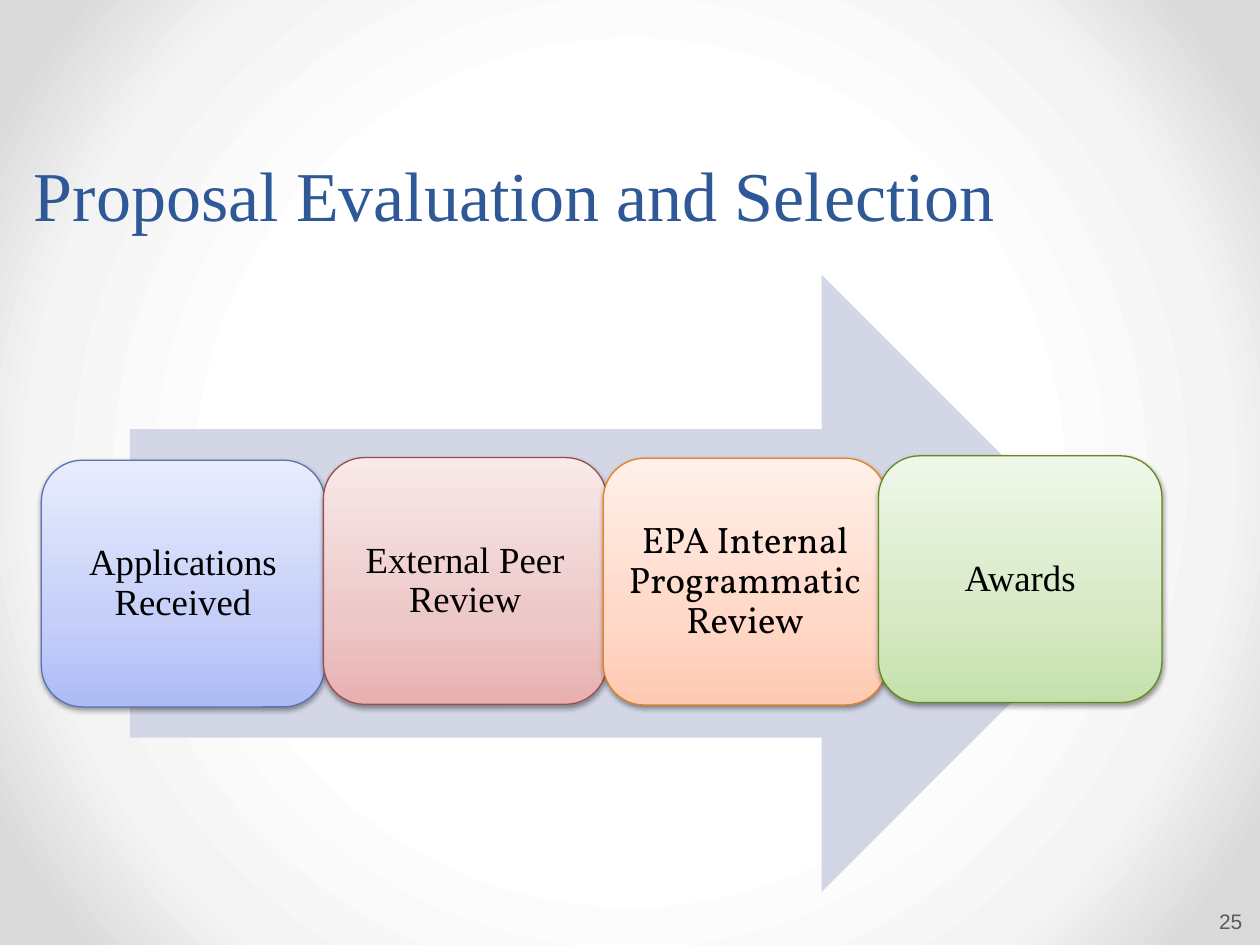
from dataclasses import dataclass

from lxml import etree
from pptx import Presentation
from pptx import util as u
from pptx.dml.color import RGBColor
from pptx.enum import shapes, text
from pptx.oxml import parse_xml
from pptx.oxml.ns import nsdecls, qn

SERIF = "Times New Roman"
STAGE_SIZE = (162, 141)
LINEAR_UP = '<a:lin ang="16200000" scaled="0"/>'
FROM_CENTRE = ('<a:path path="circle">'
               '<a:fillToRect l="50000" t="50000" r="50000" b="50000"/></a:path>')


@dataclass
class Stage:
    label: str
    left: float
    top: float
    stops: list[tuple[int, str]]
    outline: str
    font: str = SERIF


STAGES = [
    Stage("Applications Received", 23.6, 263,
          [(0, "ADBBF6"), (35, "C5CFF8"), (100, "E8ECFD")], "5C72B2"),
    Stage("External Peer Review", 184.8, 261.5,
          [(0, "E8B0B0"), (35, "EDC8C8"), (100, "F9E9E9")], "9A4E4E"),
    Stage("EPA Internal Programmatic Review", 344.7, 261.9,
          [(0, "FFC9B1"), (35, "FFD8C8"), (100, "FFF0EA")], "E6811C", "Vollkorn"),
    Stage("Awards", 502, 260.5,
          [(0, "C5E1AB"), (35, "D6E9C5"), (100, "EFF7E9")], "62891C"),
]


def rgb(value: str) -> RGBColor:
    return RGBColor.from_string(value)


def set_gradient(properties, stops: list[tuple[int, str]], direction: str) -> None:
    """Replace the solid fill among the properties with a gradient."""
    stop_xml = "".join(f'<a:gs pos="{pos * 1000}"><a:srgbClr val="{color}"/></a:gs>'
                       for pos, color in stops)
    gradient = parse_xml(f'<a:gradFill {nsdecls("a")} rotWithShape="1">'
                         f'<a:gsLst>{stop_xml}</a:gsLst>{direction}</a:gradFill>')
    properties.replace(properties.find(qn("a:solidFill")), gradient)


def add_soft_shadow(shape) -> None:
    shape.shadow.inherit = False
    effects = shape.element.spPr.find(qn("a:effectLst"))
    shadow = etree.SubElement(effects, qn("a:outerShdw"), blurRad=str(u.Pt(3.1)),
                              dist=str(u.Pt(1.6)), dir="5400000", rotWithShape="0")
    color = etree.SubElement(shadow, qn("a:srgbClr"), val="000000")
    etree.SubElement(color, qn("a:alpha"), val="38000")


def write(frame, content: str, size: float, font: str, color: str, align) -> None:
    frame.text = content
    frame.word_wrap = True
    paragraph = frame.paragraphs[0]
    paragraph.alignment = align
    run_font = paragraph.runs[0].font
    run_font.size, run_font.name = u.Pt(size), font
    run_font.color.rgb = rgb(color)


def set_margins(frame, left: float, top: float, right: float, bottom: float) -> None:
    frame.margin_left, frame.margin_top = u.Pt(left), u.Pt(top)
    frame.margin_right, frame.margin_bottom = u.Pt(right), u.Pt(bottom)


def add_stage(slide, stage: Stage) -> None:
    box = slide.shapes.add_shape(
        shapes.MSO_SHAPE.ROUNDED_RECTANGLE, u.Pt(stage.left), u.Pt(stage.top),
        *map(u.Pt, STAGE_SIZE))
    box.fill.solid()
    set_gradient(box.element.spPr, stage.stops, LINEAR_UP)
    box.line.color.rgb = rgb(stage.outline)
    box.line.width = u.Pt(0.75)
    add_soft_shadow(box)
    frame = box.text_frame
    write(frame, stage.label, 21, stage.font, "000000", text.PP_ALIGN.CENTER)
    set_margins(frame, 6.3, 6.3, 6.3, 6.3)
    frame.vertical_anchor = text.MSO_ANCHOR.MIDDLE
    frame.paragraphs[0].line_spacing = 0.9


def add_title(slide) -> None:
    title = slide.shapes.title
    title.left, title.top = u.Pt(12.2), u.Pt(88.6)
    title.width, title.height = u.Pt(613.4), u.Pt(65.5)
    frame = title.text_frame
    write(frame, "Proposal Evaluation and Selection", 40, SERIF, "2F5897",
          text.PP_ALIGN.LEFT)
    frame.vertical_anchor = text.MSO_ANCHOR.TOP
    frame.auto_size = text.MSO_AUTO_SIZE.NONE
    frame.paragraphs[0].line_spacing = 0.9


def add_page_number(slide) -> None:
    number = slide.shapes.add_textbox(u.Pt(669.6), u.Pt(508.3), u.Pt(43.9), u.Pt(28.8))
    frame = number.text_frame
    write(frame, "25", 12, "Arial", "595959", text.PP_ALIGN.RIGHT)
    set_margins(frame, 2.2, 3.6, 3.6, 3.6)
    frame.vertical_anchor = text.MSO_ANCHOR.BOTTOM


def add_arrow(slide) -> None:
    arrow = slide.shapes.add_shape(shapes.MSO_SHAPE.RIGHT_ARROW, u.Pt(74.2), u.Pt(157),
                                   u.Pt(571.7), u.Pt(352.8))
    arrow.fill.solid()
    arrow.fill.fore_color.rgb = rgb("D2D6E5")
    arrow.line.fill.background()
    arrow.shadow.inherit = False


def main() -> None:
    deck = Presentation()
    deck.slide_width, deck.slide_height = u.Pt(720), u.Pt(540)
    slide = deck.slides.add_slide(deck.slide_layouts.get_by_name("Title Only"))
    slide.background.fill.solid()
    set_gradient(slide.element.find(".//" + qn("p:bgPr")),
                 [(50, "FFFFFF"), (76, "F4F4F4"), (92, "DADADA")], FROM_CENTRE)
    add_title(slide)
    add_page_number(slide)
    add_arrow(slide)
    for stage in STAGES:
        add_stage(slide, stage)
    deck.save("out.pptx")


if __name__ == "__main__":
    main()
